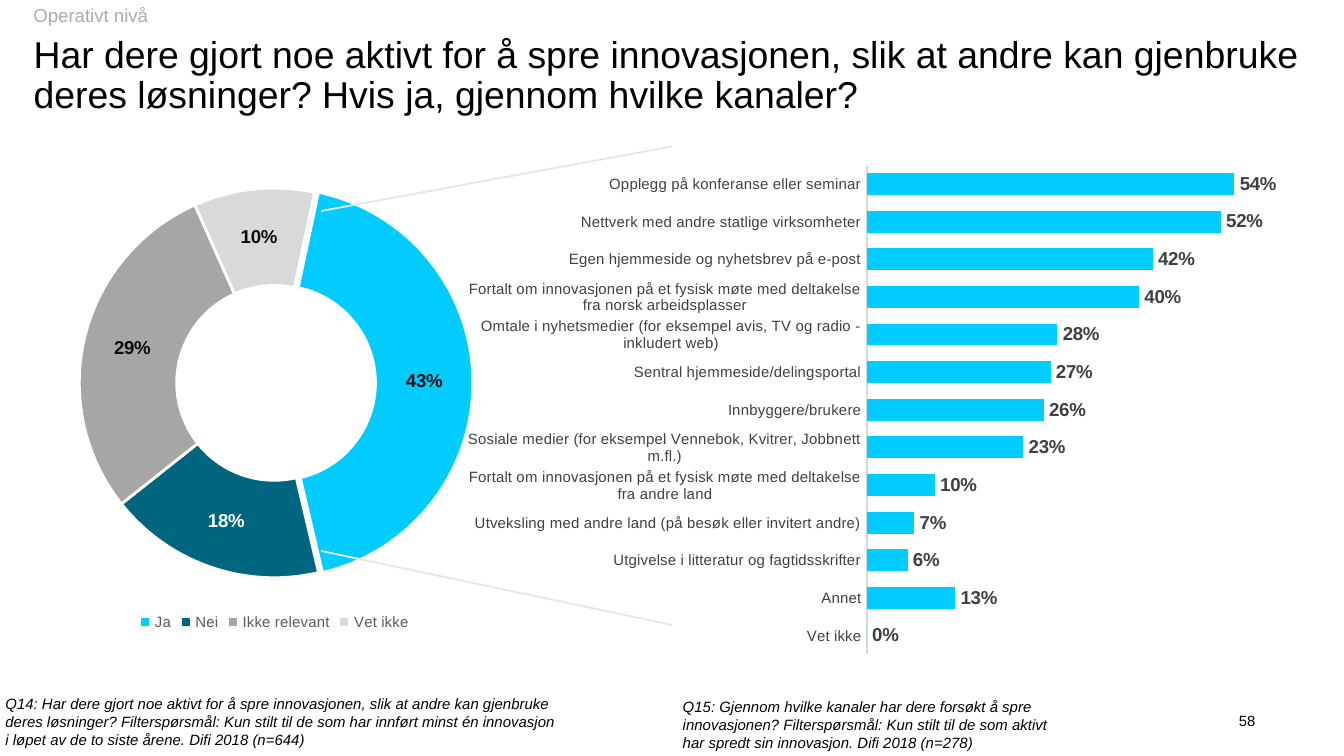
from dataclasses import dataclass

from lxml import etree
from pptx import Presentation
from pptx.chart.data import CategoryChartData
from pptx.dml.color import RGBColor
from pptx.enum.chart import XL_CHART_TYPE, XL_LABEL_POSITION, XL_LEGEND_POSITION, XL_TICK_MARK
from pptx.enum.shapes import MSO_CONNECTOR
from pptx.enum.text import MSO_ANCHOR, PP_ALIGN
from pptx.oxml import parse_xml
from pptx.oxml.ns import nsdecls, qn
from pptx.util import Inches, Pt

DOUGHNUT, BAR = XL_CHART_TYPE.DOUGHNUT, XL_CHART_TYPE.BAR_CLUSTERED
OUTSIDE_END = XL_LABEL_POSITION.OUTSIDE_END
LEGEND_BOTTOM = XL_LEGEND_POSITION.BOTTOM
NO_TICK = XL_TICK_MARK.NONE
STRAIGHT = MSO_CONNECTOR.STRAIGHT
TOP, MIDDLE, BOTTOM = MSO_ANCHOR.TOP, MSO_ANCHOR.MIDDLE, MSO_ANCHOR.BOTTOM
LEFT, RIGHT = PP_ALIGN.LEFT, PP_ALIGN.RIGHT


@dataclass(frozen=True)
class Theme:
    font: str = "Arial"
    text: str = "000000"
    kicker: str = "AFABAB"
    white: str = "FFFFFF"
    accent: str = "00CCFF"
    slices: tuple = ("00CCFF", "006680", "A6A6A6", "D9D9D9")
    slice_label: str = "0D0D0D"
    bar_label: str = "404040"
    legend: str = "595959"
    axis: str = "D9D9D9"
    guide: str = "E7E6E6"
    title_size: float = 20
    body_size: float = 10
    small_size: float = 8
    page_size: float = 7.9


def rgb(value):
    return RGBColor.from_string(value)


class SlideBuilder:
    def __init__(self, slide, theme):
        self.s, self.theme = slide, theme

    def style(self, font, size, color, bold=False, italic=False):
        font.name, font.size, font.color.rgb = self.theme.font, Pt(size), rgb(color)
        font.bold, font.italic = bold, italic

    def text(self, box, words, size, color=None, anchor=TOP, align=LEFT,
             italic=False, spacing=None, insets=(0, 0)):
        sp = self.s.shapes.add_textbox(*map(Inches, box))
        tf = sp.text_frame
        tf.word_wrap = True
        tf.vertical_anchor = anchor
        tf.margin_left = tf.margin_right = Inches(insets[0])
        tf.margin_top = tf.margin_bottom = Inches(insets[1])
        p = tf.paragraphs[0]
        p.text, p.alignment = words, align
        if spacing:
            p.line_spacing = spacing
        self.style(p.font, size, color or self.theme.text, italic=italic)

    def line(self, start, end):
        cxn = self.s.shapes.add_connector(STRAIGHT, *map(Inches, start + end))
        cxn.line.color.rgb = rgb(self.theme.guide)
        cxn.line.width = Pt(1)
        etree.SubElement(cxn._element.spPr, qn("a:effectLst"))

    def chart(self, kind, box, plot_box, rows, label_color):
        data = CategoryChartData(number_format="0%")
        data.categories = [name for name, _ in rows]
        data.add_series("Series 1", [value / 100 for _, value in rows])
        chart = self.s.shapes.add_chart(kind, *map(Inches, box), data).chart
        chart.has_title = chart.has_legend = False
        self.style(chart.font, self.theme.body_size, self.theme.text)
        series = chart.plots[0].series[0]
        labels = series.data_labels
        labels.show_value = True
        labels.number_format, labels.number_format_is_linked = "0%", False
        self.style(labels.font, self.theme.body_size, label_color, bold=True)
        self.place_plot(chart, box, plot_box)
        return chart, series

    def place_plot(self, chart, box, plot_box):
        left, top, width, height = box
        x, y, w, h = plot_box
        shares = ((x - left) / width, (y - top) / height, w / width, h / height)
        area = chart._chartSpace.chart.plotArea
        for old in area.findall(qn("c:layout")):
            area.remove(old)
        sizes = "".join(f'<c:{k} val="{v:.4f}"/>' for k, v in zip("xywh", shares))
        area.insert(0, parse_xml(
            f'<c:layout {nsdecls("c")}><c:manualLayout><c:layoutTarget val="inner"/>'
            f'<c:xMode val="edge"/><c:yMode val="edge"/>{sizes}'
            '</c:manualLayout></c:layout>'))

    def doughnut(self, box, plot_box, rows, start, hole, dark_slice):
        th = self.theme
        chart, series = self.chart(DOUGHNUT, box, plot_box, rows, th.slice_label)
        chart.plots[0].vary_by_categories = True
        ring = chart._chartSpace.chart.plotArea.find(qn("c:doughnutChart"))
        for tag, value in (("c:firstSliceAng", start), ("c:holeSize", hole)):
            ring.find(qn(tag)).set("val", str(value))
        for i, color in enumerate(th.slices):
            fmt = series.points[i].format
            fmt.fill.solid()
            fmt.fill.fore_color.rgb = rgb(color)
            fmt.line.color.rgb = rgb(th.white)
            fmt.line.width = Pt(1.5)
        # Pull the first slice out a little
        first = series._element.find(qn("c:dPt"))
        first.find(qn("c:spPr")).addprevious(
            parse_xml(f'<c:explosion {nsdecls("c")} val="4"/>'))
        self.style(series.points[dark_slice].data_label.font, th.body_size, th.white, bold=True)
        chart.has_legend = True
        chart.legend.position = LEGEND_BOTTOM
        chart.legend.include_in_layout = False
        self.style(chart.legend.font, th.small_size, th.legend)

    def bars(self, box, plot_box, rows, top):
        th = self.theme
        chart, series = self.chart(BAR, box, plot_box, rows[::-1], th.bar_label)
        chart.plots[0].vary_by_categories = False
        chart.plots[0].gap_width = 72
        series.data_labels.position = OUTSIDE_END
        series.format.fill.solid()
        series.format.fill.fore_color.rgb = rgb(th.accent)
        values, names = chart.value_axis, chart.category_axis
        values.minimum_scale, values.maximum_scale = 0, top
        values.has_major_gridlines = values.visible = False
        names.major_tick_mark = names.minor_tick_mark = NO_TICK
        names.format.line.color.rgb = rgb(th.axis)
        names.format.line.width = Pt(0.75)
        self.style(names.tick_labels.font, th.small_size, th.bar_label)


ANSWERS = [("Ja", 43), ("Nei", 18), ("Ikke relevant", 29), ("Vet ikke", 10)]
CHANNELS = [
    ("Opplegg på konferanse eller seminar", 54),
    ("Nettverk med andre statlige virksomheter", 52),
    ("Egen hjemmeside og nyhetsbrev på e-post", 42),
    ("Fortalt om innovasjonen på et fysisk møte med deltakelse fra norsk arbeidsplasser", 40),
    ("Omtale i nyhetsmedier (for eksempel avis, TV og radio - inkludert web)", 28),
    ("Sentral hjemmeside/delingsportal", 27),
    ("Innbyggere/brukere", 26),
    ("Sosiale medier (for eksempel Vennebok, Kvitrer, Jobbnett m.fl.)", 23),
    ("Fortalt om innovasjonen på et fysisk møte med deltakelse fra andre land", 10),
    ("Utveksling med andre land (på besøk eller invitert andre)", 7),
    ("Utgivelse i litteratur og fagtidsskrifter", 6),
    ("Annet", 13),
    ("Vet ikke", 0),
]


def main():
    prs = Presentation()
    prs.slide_width = Inches(10)
    prs.slide_height = prs.slide_width * 9 // 16
    th = Theme()
    s = SlideBuilder(prs.slides.add_slide(prs.slide_layouts[6]), th)

    # Heading
    s.text((0.15, 0, 1.24, 0.26), "Operativt nivå", th.body_size, th.kicker,
           spacing=0.9, insets=(0.1, 0.05))
    s.text((0.25, 0.39, 9.67, 0.48),
           "Har dere gjort noe aktivt for å spre innovasjonen, slik at andre kan "
           "gjenbruke deres løsninger? Hvis ja, gjennom hvilke kanaler?",
           th.title_size, anchor=BOTTOM, spacing=0.9)

    # Charts
    s.doughnut((0.16, 1.23, 3.77, 3.5), (0.57, 1.4, 2.94, 2.9), ANSWERS,
               start=12, hole=70, dark_slice=1)
    s.bars((3.4, 1.09, 6.4, 4.15), (6.45, 1.23, 3.04, 3.64), CHANNELS, top=0.6)

    # Guides from the "Ja" slice to the channels
    s.line((2.39, 1.57), (5, 1.09))
    s.line((2.39, 4.1), (5, 4.65))

    # Question notes and page number
    s.text((0.04, 5.17, 4.11, 0.4),
           "Q14: Har dere gjort noe aktivt for å spre innovasjonen, slik at andre kan "
           "gjenbruke deres løsninger? Filterspørsmål: Kun stilt til de som har innført "
           "minst én innovasjon i løpet av de to siste årene. Difi 2018 (n=644)",
           th.small_size, italic=True)
    s.text((5.08, 5.19, 2.79, 0.4),
           "Q15: Gjennom hvilke kanaler har dere forsøkt å spre innovasjonen? "
           "Filterspørsmål: Kun stilt til de som aktivt har spredt sin innovasjon. "
           "Difi 2018 (n=278)",
           th.small_size, italic=True)
    s.text((9.09, 5.29, 0.25, 0.15), "58", th.page_size, anchor=MIDDLE, align=RIGHT)

    prs.save("out.pptx")


if __name__ == "__main__":
    main()
